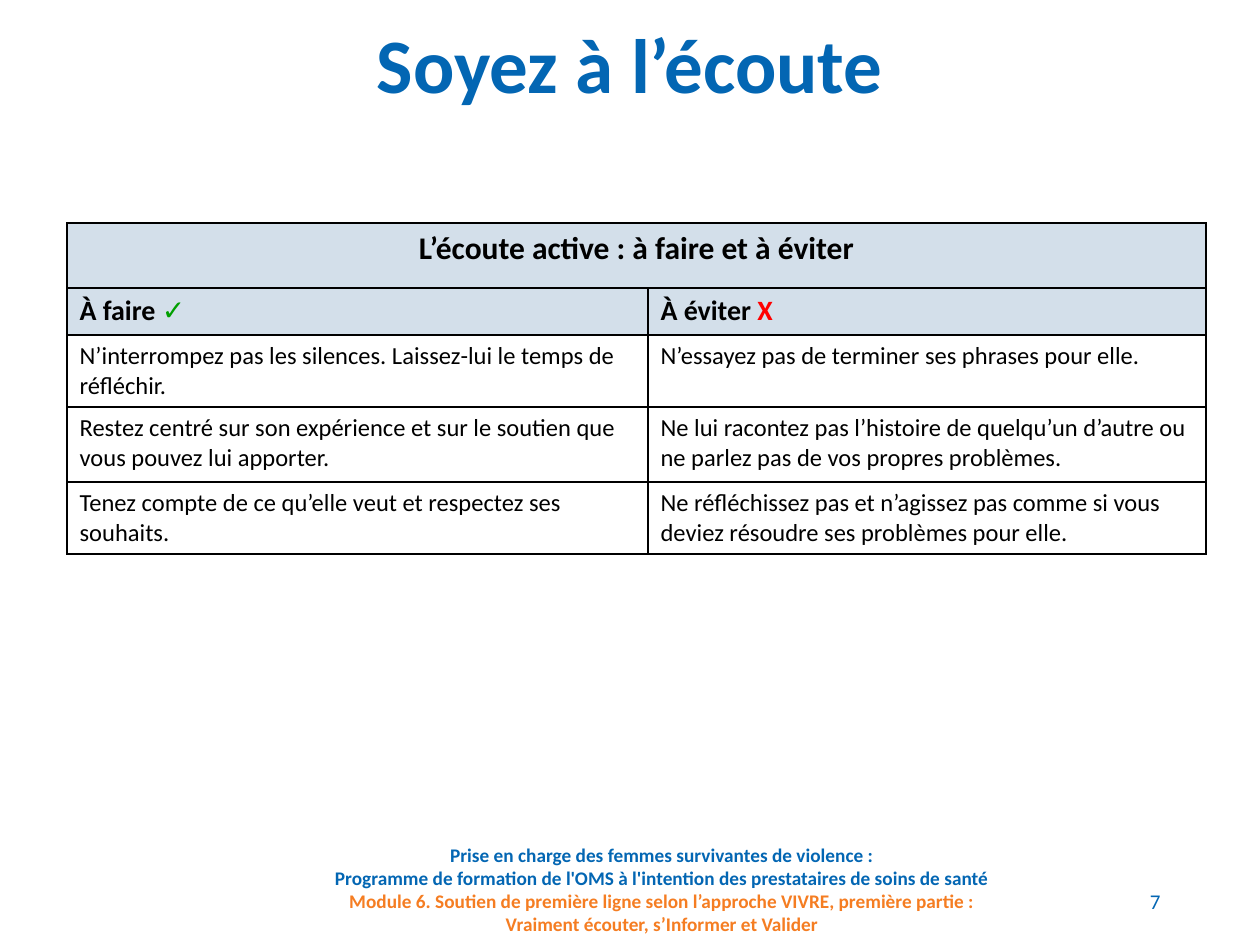
from lxml.etree import SubElement
from pptx import Presentation
from pptx.dml.color import RGBColor
from pptx.enum.text import MSO_ANCHOR, PP_ALIGN
from pptx.oxml.ns import qn
from pptx.util import Emu, Pt

COLORS = {
    "blue": "0366B3",
    "orange": "F57D22",
    "black": "000000",
    "green": "009F00",
    "red": "FF0000",
    "header": "D3DFEA",
    "white": "FFFFFF",
}
PX_PER_INCH = 126


def px(length):
    return Emu(round(length * 914400 / PX_PER_INCH))


class SlideBuilder:
    font_name = "Calibri"
    border_width = Pt(1)

    def __init__(self, slide):
        self.slide = slide

    def place(self, shape, left, top, width, height):
        shape.left, shape.top = px(left), px(top)
        shape.width, shape.height = px(width), px(height)

    def add_words(self, paragraph, text, size, color="black", bold=False):
        run = paragraph.add_run()
        run.text = text
        run.font.name = self.font_name
        run.font.size = Pt(size)
        run.font.bold = bold
        run.font.color.rgb = RGBColor.from_string(COLORS[color])

    def title(self, text, box):
        heading = self.slide.shapes.title
        self.place(heading, *box)
        heading.text_frame.vertical_anchor = MSO_ANCHOR.MIDDLE
        paragraph = heading.text_frame.paragraphs[0]
        paragraph.alignment = PP_ALIGN.CENTER
        paragraph.line_spacing = 0.9
        self.add_words(paragraph, text, 44, "blue", True)

    def text(self, paragraphs, box, size, align, anchor=MSO_ANCHOR.TOP, bold=False):
        frame = self.slide.shapes.add_textbox(*map(px, box)).text_frame
        frame.word_wrap = True
        frame.vertical_anchor = anchor
        for index, lines in enumerate(paragraphs):
            paragraph = frame.add_paragraph() if index else frame.paragraphs[0]
            paragraph.alignment = align
            for number, (line, color) in enumerate(lines):
                if number:
                    paragraph.add_line_break()
                self.add_words(paragraph, line, size, color, bold)

    def cell(self, cell, runs, size, fill, bold, align):
        properties = cell._tc.get_or_add_tcPr()
        for side in ("lnL", "lnR", "lnT", "lnB"):
            border = SubElement(properties, qn(f"a:{side}"), w=str(self.border_width))
            solid = SubElement(border, qn("a:solidFill"))
            SubElement(solid, qn("a:srgbClr"), val=COLORS["black"])
        cell.fill.solid()
        cell.fill.fore_color.rgb = RGBColor.from_string(COLORS[fill])
        paragraph = cell.text_frame.paragraphs[0]
        paragraph.alignment = align
        for text, color in runs:
            self.add_words(paragraph, text, size, color, bold)

    def table(self, heading, column_heads, advice, left, top, widths, heights):
        grid = self.slide.shapes.add_table(
            len(heights), len(widths), px(left), px(top), px(sum(widths)), px(sum(heights))
        ).table
        grid.first_row = grid.horz_banding = False
        for column, width in zip(grid.columns, widths):
            column.width = px(width)
        for row, height in zip(grid.rows, heights):
            row.height = px(height)
        grid.cell(0, 0).merge(grid.cell(0, 1))
        body = [[[(sentence, "black")] for sentence in pair] for pair in advice]
        rows = [[[(heading, "black")], []], column_heads, *body]
        sizes = [18, 16] + [14] * len(body)
        for r, (row, size) in enumerate(zip(rows, sizes)):
            is_head = r < 2
            fill = "header" if is_head else "white"
            align = PP_ALIGN.LEFT if r else PP_ALIGN.CENTER
            for c, runs in enumerate(row):
                self.cell(grid.cell(r, c), runs, size, fill, is_head, align)


def main():
    presentation = Presentation()
    presentation.slide_width, presentation.slide_height = px(1260), px(945)
    builder = SlideBuilder(presentation.slides.add_slide(presentation.slide_layouts[5]))

    footer = [
        [("Prise en charge des femmes survivantes de violence :", "blue")],
        [
            ("Programme de formation de l'OMS à l'intention des prestataires de soins de santé", "blue"),
            ("Module 6. Soutien de première ligne selon l’approche VIVRE, première partie :", "orange"),
            ("Vraiment écouter, s’Informer et Valider", "orange"),
        ],
    ]
    builder.text(footer, (219, 837, 886, 83), 11, PP_ALIGN.CENTER, bold=True)
    builder.title("Soyez à l’écoute", (87, 0, 1086, 137))
    builder.text([[("7", "blue")]], (1105, 876, 68, 50), 12, PP_ALIGN.RIGHT, MSO_ANCHOR.MIDDLE)

    column_heads = [
        [("À faire ", "black"), ("✓", "green")],
        [("À éviter ", "black"), ("X", "red")],
    ]
    advice = [
        (
            "N’interrompez pas les silences. Laissez-lui le temps de réfléchir.",
            "N’essayez pas de terminer ses phrases pour elle.",
        ),
        (
            "Restez centré sur son expérience et sur le soutien que vous pouvez lui apporter.",
            "Ne lui racontez pas l’histoire de quelqu’un d’autre ou ne parlez pas de vos propres problèmes.",
        ),
        (
            "Tenez compte de ce qu’elle veut et respectez ses souhaits.",
            "Ne réfléchissez pas et n’agissez pas comme si vous deviez résoudre ses problèmes pour elle.",
        ),
    ]
    builder.table(
        "L’écoute active : à faire et à éviter", column_heads, advice,
        67, 223, (581, 558), (65, 47, 72, 75, 72),
    )
    presentation.save("out.pptx")


if __name__ == "__main__":
    main()
